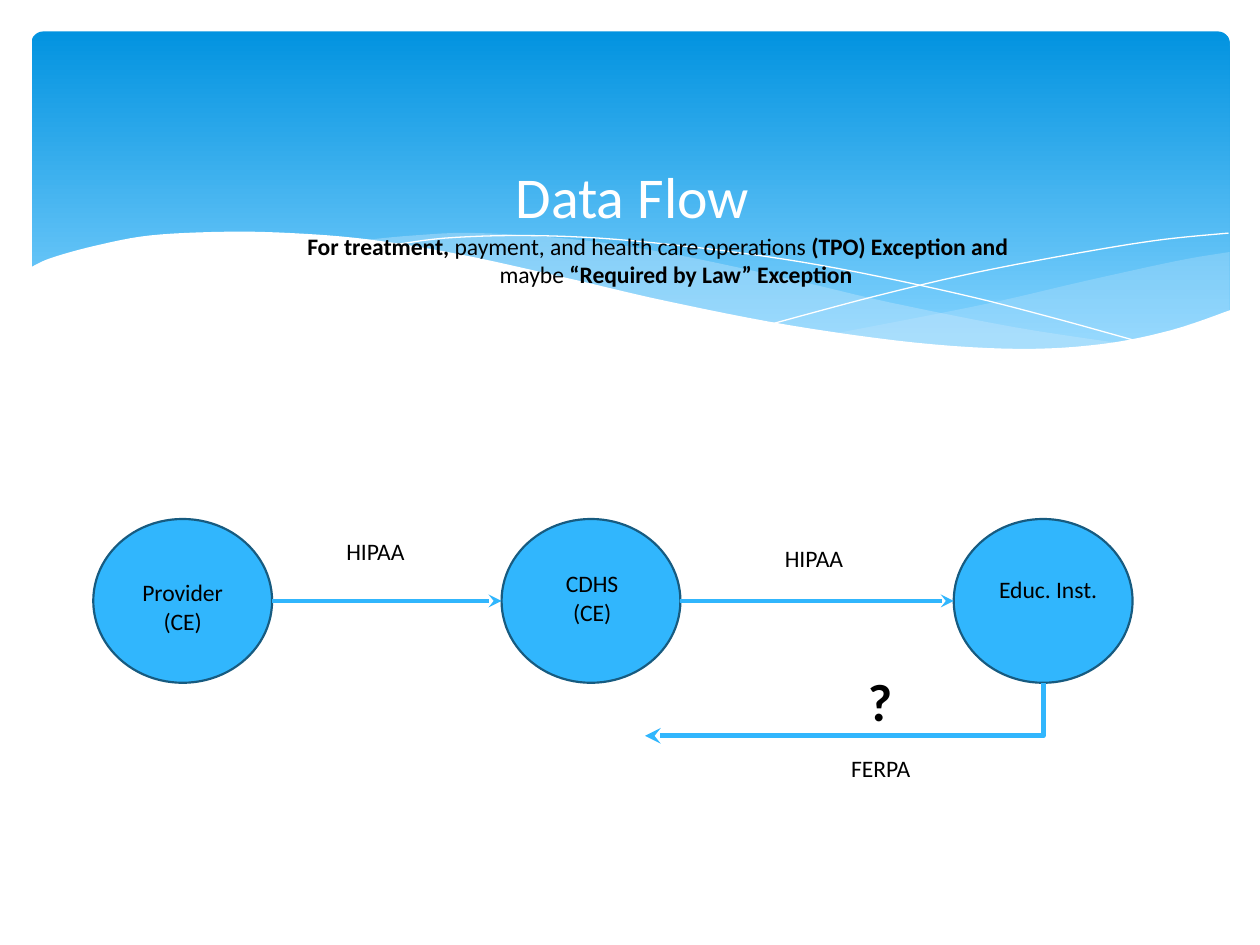
from dataclasses import dataclass
from itertools import pairwise

from lxml import etree
from pptx import Presentation
from pptx.dml.color import RGBColor
from pptx.enum.shapes import MSO_CONNECTOR, MSO_SHAPE
from pptx.enum.text import MSO_ANCHOR, PP_ALIGN
from pptx.oxml.ns import qn
from pptx.util import Pt

LEFT, CENTER = PP_ALIGN.LEFT, PP_ALIGN.CENTER
MIDDLE = MSO_ANCHOR.MIDDLE
STRAIGHT, ELBOW = MSO_CONNECTOR.STRAIGHT, MSO_CONNECTOR.ELBOW
OVAL, ROUNDED = MSO_SHAPE.OVAL, MSO_SHAPE.ROUNDED_RECTANGLE

FONT = "Calibri"
COLORS = {
    "white": "FFFFFF", "black": "000000", "node": "31B6FD", "outline": "175B80",
    "sky_top": "0293E0", "sky_bottom": "81D2FE", "wave": "C6E7FC",
}
Point = tuple[float, float]


@dataclass(frozen=True)
class Wave:
    """Smooth edges joined by straight lines; filled, or stroked if open."""
    edges: list[list[Point]]
    filled: bool = True
    color: str = "wave"
    opacity: int = 100


@dataclass(frozen=True)
class Label:
    """Lines of (text, bold) spans in a text box."""
    lines: list[list[tuple[str, bool]]]
    left: float
    top: float
    width: float
    height: float
    size: float = 13.5
    aligns: tuple = (CENTER, CENTER)


WAVES = [
    Wave([[(702.7, 144), (673, 149), (620, 160.6), (561, 174.2), (476, 190.8)],
          [(476, 190.8), (517.7, 195.8), (562.3, 199.4), (593, 199.6),
           (628, 197.3), (663, 190.8), (702.7, 177.8)]], opacity=29),
    Wave([[(643, 196.6), (581, 187.2), (508.3, 172.8), (452.9, 159.8),
           (389.5, 146.2), (334.8, 137.5), (273.6, 133.2), (236, 134.6),
           (206, 137.5)],
          [(206, 137.5), (260.6, 146.2), (323.3, 159.8), (407.5, 178.6),
           (468, 190), (519.8, 197.3), (565.2, 200.2), (603.4, 200.2),
           (643, 196.6)]], opacity=40),
    Wave([[(222.5, 140.4), (254.2, 136.1), (299.5, 134.6), (352, 136.8),
           (419, 144), (478.8, 153.4), (547.2, 167.8), (598.3, 180.7),
           (653, 195.8)]], filled=False, color="white"),
    Wave([[(441.4, 185), (500.4, 169.2), (558.7, 155.5), (623.5, 143.3),
           (665.3, 136.8), (702, 133.2)]], filled=False, color="white"),
    Wave([[(703.4, 177.1), (669.6, 188.6), (630, 196.6), (582.5, 199.4),
           (522.7, 195.8), (450.7, 185.8), (380.9, 172.1), (321.8, 158.4),
           (262.8, 145.4), (210.2, 136.8), (165.6, 133.2), (127.4, 132.5),
           (85.7, 134.6), (54.7, 140.4), (28.8, 147.6), (16.6, 153.4)],
          [(16.6, 236.9), (703.4, 236.9)]], color="white"),
]

NODE_LEFTS = [53.3, 286.6, 545]
NODE_TOP, NODE_WIDTH, NODE_HEIGHT = 296.6, 102.2, 93.6

LABELS = [
    Label([[("For treatment, ", True),
            ("payment, and health care operations ", False),
            ("(TPO) Exception and", True)],
           [("maybe", False), (" “Required by Law” Exception", True)]],
          168.5, 128.9, 435.6, 56.2, aligns=(LEFT, CENTER)),
    Label([[("Provider", False)], [("(CE)", False)]], 72, 326.9, 64.8, 56.2),
    Label([[("CDHS", False)], [("(CE)", False)]], 306, 321.8, 64.8, 40.3),
    Label([[("Educ. Inst.", False)]], 563.8, 324.7, 72.7, 40.3, aligns=(LEFT,)),
    Label([[("?", True)]], 488.9, 378.7, 36, 43.9, size=30, aligns=(LEFT,)),
    Label([[("HIPAA", False)]], 172.8, 303.1, 83.5, 23.8),
    Label([[("HIPAA", False)]], 423.4, 307.4, 83.5, 23.8),
    Label([[("FERPA", False)]], 461.5, 427, 83.5, 23.8),
]


def rgb(name: str) -> RGBColor:
    return RGBColor.from_string(COLORS[name])


def add_span(para, text: str, *, size: float, color: str = "black",
             bold: bool = False, align=CENTER) -> None:
    para.alignment = align
    span = para.add_run()
    span.text = text
    span.font.name, span.font.size, span.font.bold = FONT, Pt(size), bold
    span.font.color.rgb = rgb(color)


def smooth(points: list[Point], steps: int = 6) -> list[Point]:
    """Catmull-Rom curve through the points."""
    if len(points) < 3:
        return points
    padded = [points[0], *points, points[-1]]
    curve = [points[0]]
    for index, (start, end) in enumerate(pairwise(points)):
        before, after = padded[index], padded[index + 3]
        for step in range(1, steps + 1):
            t = step / steps
            curve.append(tuple(
                0.5 * (2 * b + (c - a) * t + (2 * a - 5 * b + 4 * c - d) * t**2
                       + (3 * b - a - 3 * c + d) * t**3)
                for a, b, c, d in zip(before, start, end, after)))
    return curve


def add_wave(slide, wave: Wave) -> None:
    points = [(Pt(x), Pt(y)) for edge in wave.edges for x, y in smooth(edge)]
    builder = slide.shapes.build_freeform(*points[0], scale=1.0)
    builder.add_line_segments(points[1:], close=wave.filled)
    shape = builder.convert_to_shape()
    shape.shadow.inherit = False
    if not wave.filled:
        shape.fill.background()
        shape.line.color.rgb, shape.line.width = rgb(wave.color), Pt(0.75)
        return
    shape.line.fill.background()
    shape.fill.solid()
    shape.fill.fore_color.rgb = rgb(wave.color)
    if wave.opacity < 100:
        color = shape.fill._xPr.find(".//" + qn("a:srgbClr"))
        etree.SubElement(color, qn("a:alpha"), val=str(wave.opacity * 1000))


def add_banner(slide) -> None:
    banner = slide.shapes.add_shape(ROUNDED, Pt(18), Pt(18), Pt(684.7), Pt(194.4))
    banner.adjustments[0] = 0.034
    banner.shadow.inherit = False
    banner.line.fill.background()
    banner.fill.gradient()
    banner.fill.gradient_angle = 270
    stops = zip(banner.fill.gradient_stops, (0, 0.9), ("sky_top", "sky_bottom"))
    for stop, position, color in stops:
        stop.position, stop.color.rgb = position, rgb(color)


def add_node(slide, left: float) -> None:
    node = slide.shapes.add_shape(OVAL, Pt(left), Pt(NODE_TOP),
                                  Pt(NODE_WIDTH), Pt(NODE_HEIGHT))
    node.shadow.inherit = False
    node.fill.solid()
    node.fill.fore_color.rgb = rgb("node")
    node.line.color.rgb, node.line.width = rgb("outline"), Pt(1.25)


def add_arrow(slide, kind, start: Point, end: Point, weight: float):
    arrow = slide.shapes.add_connector(kind, *map(Pt, start), *map(Pt, end))
    arrow.line.color.rgb, arrow.line.width = rgb("node"), Pt(weight)
    etree.SubElement(arrow.line._get_or_add_ln(), qn("a:tailEnd"), type="stealth")
    etree.SubElement(arrow._element.spPr, qn("a:effectLst"))
    return arrow


def add_return_arrow(slide, start: Point, end: Point) -> None:
    """One-bend arrow going down, then left: a quarter-turned elbow."""
    center_x, center_y = (start[0] + end[0]) / 2, (start[1] + end[1]) / 2
    half_width, half_height = (end[1] - start[1]) / 2, (start[0] - end[0]) / 2
    arrow = add_arrow(slide, ELBOW, (center_x - half_width, center_y - half_height),
                      (center_x + half_width, center_y + half_height), 3)
    properties = arrow._element.spPr
    properties.find(qn("a:xfrm")).set("rot", str(90 * 60000))
    properties.find(qn("a:prstGeom")).set("prst", "bentConnector2")


def add_label(slide, label: Label) -> None:
    box = slide.shapes.add_textbox(Pt(label.left), Pt(label.top),
                                   Pt(label.width), Pt(label.height))
    frame = box.text_frame
    frame.word_wrap = True
    for index, (line, align) in enumerate(zip(label.lines, label.aligns)):
        para = frame.add_paragraph() if index else frame.paragraphs[0]
        for text, bold in line:
            add_span(para, text, size=label.size, bold=bold, align=align)


def main() -> None:
    deck = Presentation()
    deck.slide_width, deck.slide_height = Pt(720), Pt(540)
    slide = deck.slides.add_slide(deck.slide_layouts[5])

    # Banner with waves
    add_banner(slide)
    for wave in WAVES:
        add_wave(slide, wave)

    # Title, raised above the banner
    title = slide.shapes.title
    title.left, title.top, title.width, title.height = map(Pt, (37.4, 77.8, 648, 67.7))
    title.text_frame.vertical_anchor = MIDDLE
    add_span(title.text_frame.paragraphs[0], "Data Flow", size=33, color="white")
    slide.shapes._spTree.append(title._element)

    # Nodes and the arrows between them
    for left in NODE_LEFTS:
        add_node(slide, left)
    middle = NODE_TOP + NODE_HEIGHT / 2
    for left, following in pairwise(NODE_LEFTS):
        add_arrow(slide, STRAIGHT, (left + NODE_WIDTH, middle), (following, middle), 2.5)
    add_return_arrow(slide, (NODE_LEFTS[-1] + NODE_WIDTH / 2, NODE_TOP + NODE_HEIGHT),
                     (368.6, 420.5))

    # Texts
    for label in LABELS:
        add_label(slide, label)
    deck.save("out.pptx")


if __name__ == "__main__":
    main()
